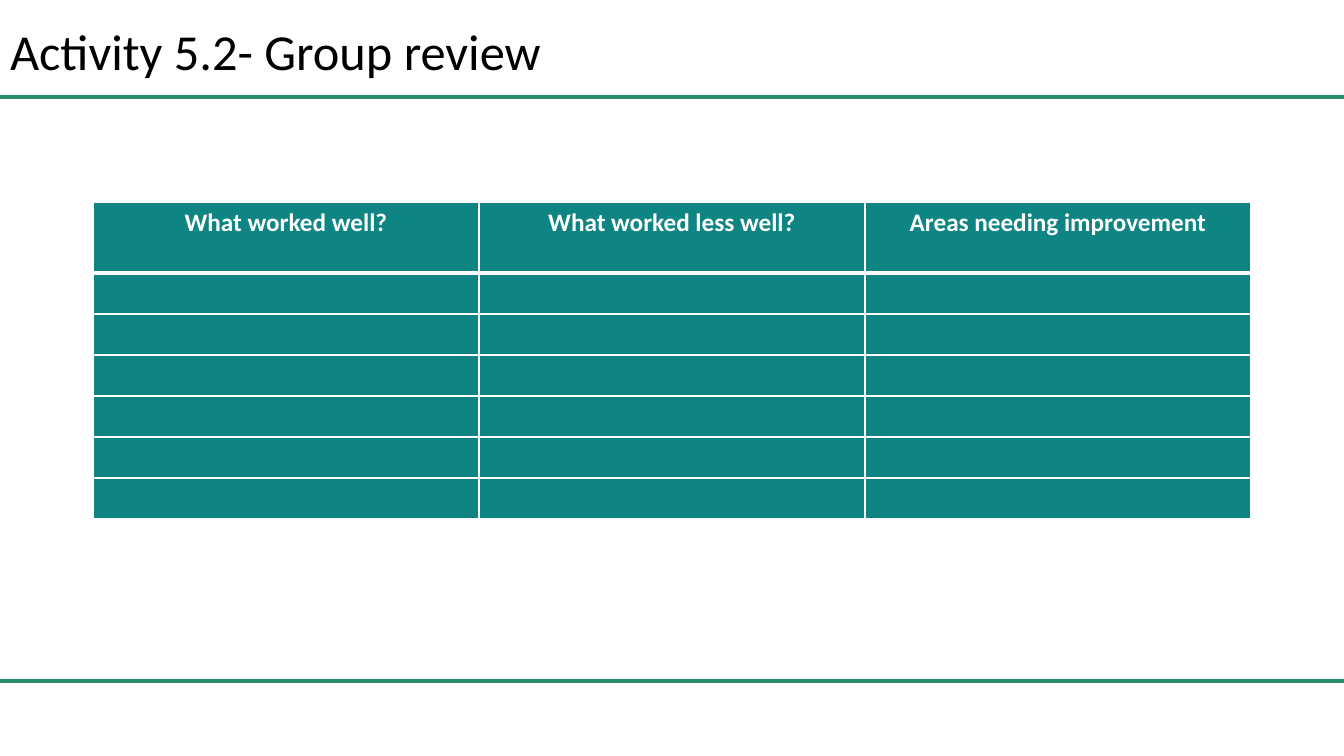
from dataclasses import dataclass
from lxml import etree
from pptx import Presentation
from pptx.dml.color import RGBColor as RGB
from pptx.enum.shapes import MSO_CONNECTOR as Conn
from pptx.enum.text import MSO_ANCHOR as Anchor, MSO_AUTO_SIZE as Auto, PP_ALIGN as Align
from pptx.oxml.ns import qn
from pptx.util import Emu, Pt


@dataclass
class Theme:
    font: str = "Calibri"
    ink: str = "000000"
    white: str = "FFFFFF"
    rule: str = "2B8D6F"
    teal: str = "0E8583"
    title: int = 36
    head: int = 18
    thin: int = 1
    thick: int = 3


theme = Theme()
WIDE, HIGH = 1344, 756


def px(n):
    return Emu(round(n * 914400 / 100.8))


def border(cell, side, width):
    line = etree.SubElement(cell._tc.get_or_add_tcPr(), qn("a:" + side), w=str(Pt(width)))
    fill = etree.SubElement(line, qn("a:solidFill"))
    etree.SubElement(fill, qn("a:srgbClr"), val=theme.white)


# Slide
deck = Presentation()
deck.slide_width, deck.slide_height = px(WIDE), px(HIGH)
slide = deck.slides.add_slide(deck.slide_layouts[5])

# Rules across the page
for y in (681, 97):
    rule = slide.shapes.add_connector(Conn.STRAIGHT, 0, px(y), px(WIDE), px(y))
    rule.line.color.rgb = RGB.from_string(theme.rule)
    rule.line.width = Pt(theme.thick)
    etree.SubElement(rule._element.spPr, qn("a:effectLst"))

# Title
title = slide.shapes.title
title.left, title.top, title.width, title.height = px(0), px(2), px(1351), px(105)
frame = title.text_frame
frame.text = "Activity 5.2- Group review"
frame.vertical_anchor = Anchor.MIDDLE
frame.auto_size = Auto.NONE
para = frame.paragraphs[0]
para.alignment = Align.LEFT
para.line_spacing = 0.9
para.font.name, para.font.size = theme.font, Pt(theme.title)
para.font.color.rgb = RGB.from_string(theme.ink)

# Review table
heads = ["What worked well?", "What worked less well?", "Areas needing improvement"]
ROWS, HEAD, ROW, COL = 7, 71, 41, 386
tall = HEAD + (ROWS - 1) * ROW
table = slide.shapes.add_table(
    ROWS, len(heads), px(93), px(202), px(COL * len(heads)), px(tall)).table
for col in table.columns:
    col.width = px(COL)
for r, row in enumerate(table.rows):
    row.height = px(ROW if r else HEAD)
    for c, cell in enumerate(row.cells):
        # The header is parted from the body by a thick line
        widths = {"lnL": theme.thin, "lnR": theme.thin,
                  "lnT": theme.thick if r == 1 else theme.thin,
                  "lnB": theme.thick if r == 0 else theme.thin}
        for side, width in widths.items():
            border(cell, side, width)
        cell.fill.solid()
        cell.fill.fore_color.rgb = RGB.from_string(theme.teal)
        if r == 0:
            cell.text = heads[c]
        para = cell.text_frame.paragraphs[0]
        para.alignment = Align.CENTER
        para.font.name, para.font.size = theme.font, Pt(theme.head)
        para.font.bold = r == 0
        para.font.color.rgb = RGB.from_string(theme.white)

deck.save("out.pptx")
